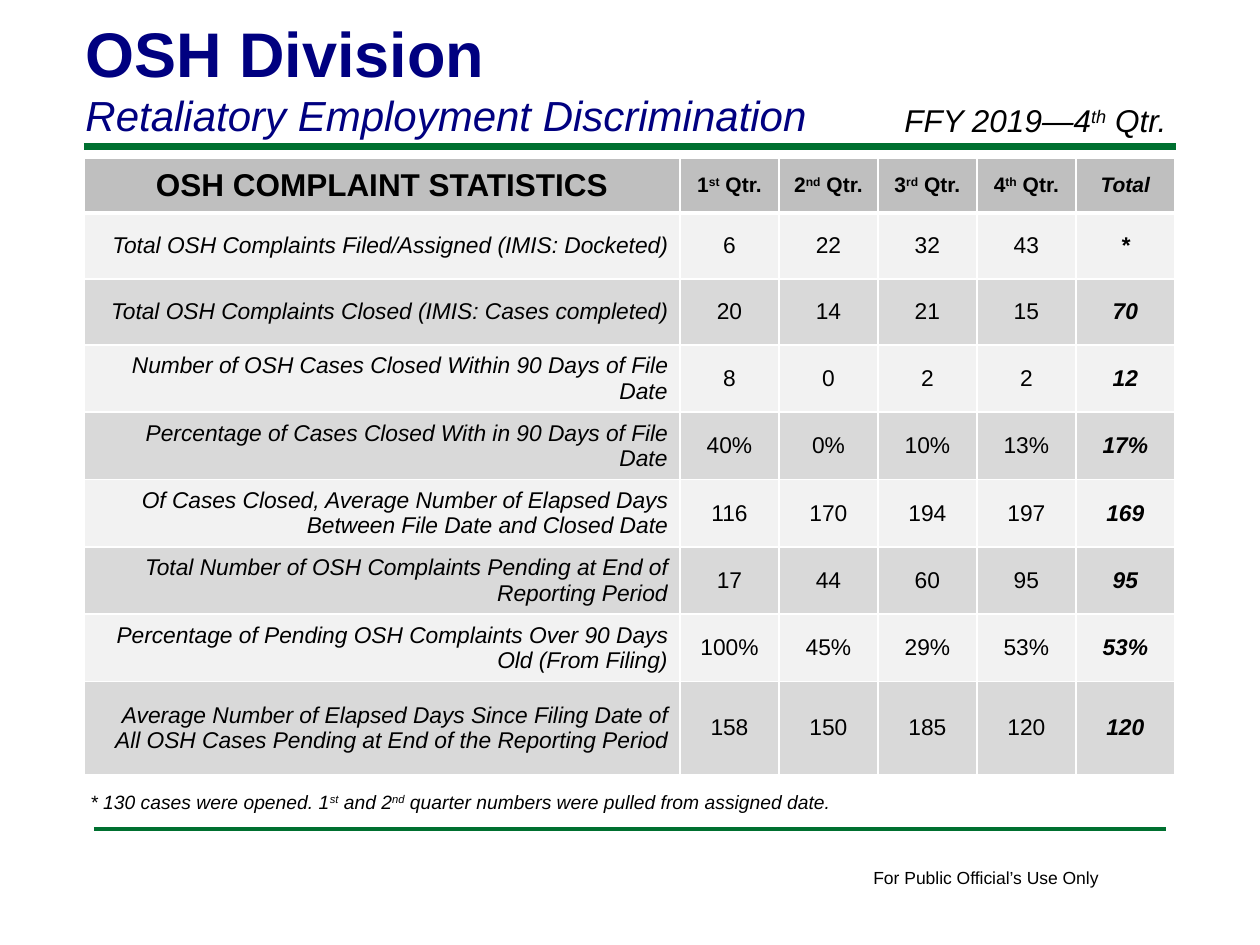
from lxml import etree
from pptx import Presentation
from pptx import util as u
from pptx.dml.color import RGBColor
from pptx.enum import shapes, text
from pptx.oxml import ns

NAVY, GREEN, BLACK, WHITE = "000080", "007030", "000000", "FFFFFF"
HEADER, LIGHT, DARK = "BFBFBF", "F2F2F2", "D9D9D9"
HEADINGS = ["OSH COMPLAINT STATISTICS", "1^st^ Qtr.", "2^nd^ Qtr.",
            "3^rd^ Qtr.", "4^th^ Qtr.", "Total"]
STATISTICS = [
    ("Total OSH Complaints Filed/Assigned (IMIS: Docketed)",
     "6", "22", "32", "43", "*"),
    ("Total OSH Complaints Closed (IMIS: Cases completed)",
     "20", "14", "21", "15", "70"),
    ("Number of OSH Cases Closed Within 90 Days of File Date",
     "8", "0", "2", "2", "12"),
    ("Percentage of Cases Closed With in 90 Days of File Date",
     "40%", "0%", "10%", "13%", "17%"),
    ("Of Cases Closed, Average Number of Elapsed Days Between File Date and Closed Date",
     "116", "170", "194", "197", "169"),
    ("Total Number of OSH Complaints Pending at End of Reporting Period",
     "17", "44", "60", "95", "95"),
    ("Percentage of Pending OSH Complaints Over 90 Days Old (From Filing)",
     "100%", "45%", "29%", "53%", "53%"),
    ("Average Number of Elapsed Days Since Filing Date of All OSH Cases Pending "
     "at End of the Reporting Period", "158", "150", "185", "120", "120"),
]


def px(n):
    return u.Emu(round(n * 914400 / 126))


def color(value):
    return RGBColor.from_string(value)


def write(p, content, font="Arial", size=13, fill=BLACK, bold=False, italic=False, align="LEFT"):
    p.alignment = getattr(text.PP_ALIGN, align)
    for i, part in enumerate(content.split("^")):
        r = p.add_run()
        r.text = part
        f = r.font
        f.name, f.size, f.bold, f.italic = font, u.Pt(size), bold, italic
        f.color.rgb = color(fill)
        if i % 2:
            r._r.get_or_add_rPr().set("baseline", "30000")


class Report:
    """Draws the elements of a quarterly report slide in one style."""

    def __init__(self, slide, font="Arial"):
        self.s = slide
        self.font = font

    def rule(self, x1, x2, y, width):
        c = self.s.shapes.add_connector(shapes.MSO_CONNECTOR.STRAIGHT,
                                        px(x1), px(y), px(x2), px(y))
        c.line.color.rgb = color(GREEN)
        c.line.width = u.Pt(width)
        etree.SubElement(c._element.spPr, ns.qn("a:effectLst"))

    def label(self, x, y, w, h, *lines, wrap=True):
        sp = self.s.shapes.add_textbox(px(x), px(y), px(w), px(h))
        tf = sp.text_frame
        tf.word_wrap = wrap
        tf.auto_size = text.MSO_AUTO_SIZE.SHAPE_TO_FIT_TEXT
        for i, (content, style) in enumerate(lines):
            p = tf.add_paragraph() if i else tf.paragraphs[0]
            write(p, content, self.font, **style)

    def cell(self, cell, content, fill, bottom=1, **style):
        tcPr = cell._tc.get_or_add_tcPr()
        for side, width in (("L", 1), ("R", 1), ("T", 1), ("B", bottom)):
            ln = etree.SubElement(tcPr, ns.qn(f"a:ln{side}"), w=str(u.Pt(width)))
            solid = etree.SubElement(ln, ns.qn("a:solidFill"))
            etree.SubElement(solid, ns.qn("a:srgbClr"), val=WHITE)
        cell.fill.solid()
        cell.fill.fore_color.rgb = color(fill)
        cell.vertical_anchor = text.MSO_ANCHOR.MIDDLE
        write(cell.text_frame.paragraphs[0], content, self.font, **style)

    def table(self, x, y, widths, heights, headings, rows):
        frame = self.s.shapes.add_table(len(heights), len(widths), px(x), px(y),
                                        px(sum(widths)), px(sum(heights)))
        t = frame.table
        t.first_row = t.horz_banding = False
        for column, w in zip(t.columns, widths):
            column.width = px(w)
        for row, h in zip(t.rows, heights):
            row.height = px(h)
        last = len(widths) - 1
        for c, heading in enumerate(headings):
            self.cell(t.cell(0, c), heading, HEADER, bottom=3, size=12 if c else 18,
                      bold=True, italic=c == last, align="CENTER")
        for r, values in enumerate(rows, 1):
            for c, value in enumerate(values):
                self.cell(t.cell(r, c), value, LIGHT if r % 2 else DARK, bold=c == last,
                          italic=c in (0, last), align="CENTER" if c else "RIGHT")


def main():
    prs = Presentation()
    prs.slide_width, prs.slide_height = px(1260), px(945)
    report = Report(prs.slides.add_slide(prs.slide_layouts[6]))
    report.rule(84, 1176, 147, 4)
    report.rule(94, 1166, 829, 2)
    report.label(861, 861, 253, 34, ("For Public Official’s Use Only", dict(size=10)), wrap=False)
    report.table(84, 158, [596] + [99] * 5, [55] + [66] * 2 + [67] * 5 + [93],
                 HEADINGS, STATISTICS)
    report.label(73, 8, 1040, 140,
                 ("OSH Division", dict(size=36, fill=NAVY, bold=True)),
                 ("Retaliatory Employment Discrimination", dict(size=24, fill=NAVY, italic=True)))
    report.label(892, 95, 315, 50, ("FFY 2019—4^th^ Qtr.", dict(size=18, italic=True)))
    report.label(78, 784, 767, 37,
                 ("* 130 cases were opened. 1^st^ and 2^nd^ quarter numbers were pulled "
                  "from assigned date.", dict(size=11, italic=True)), wrap=False)
    prs.save("out.pptx")


if __name__ == "__main__":
    main()
